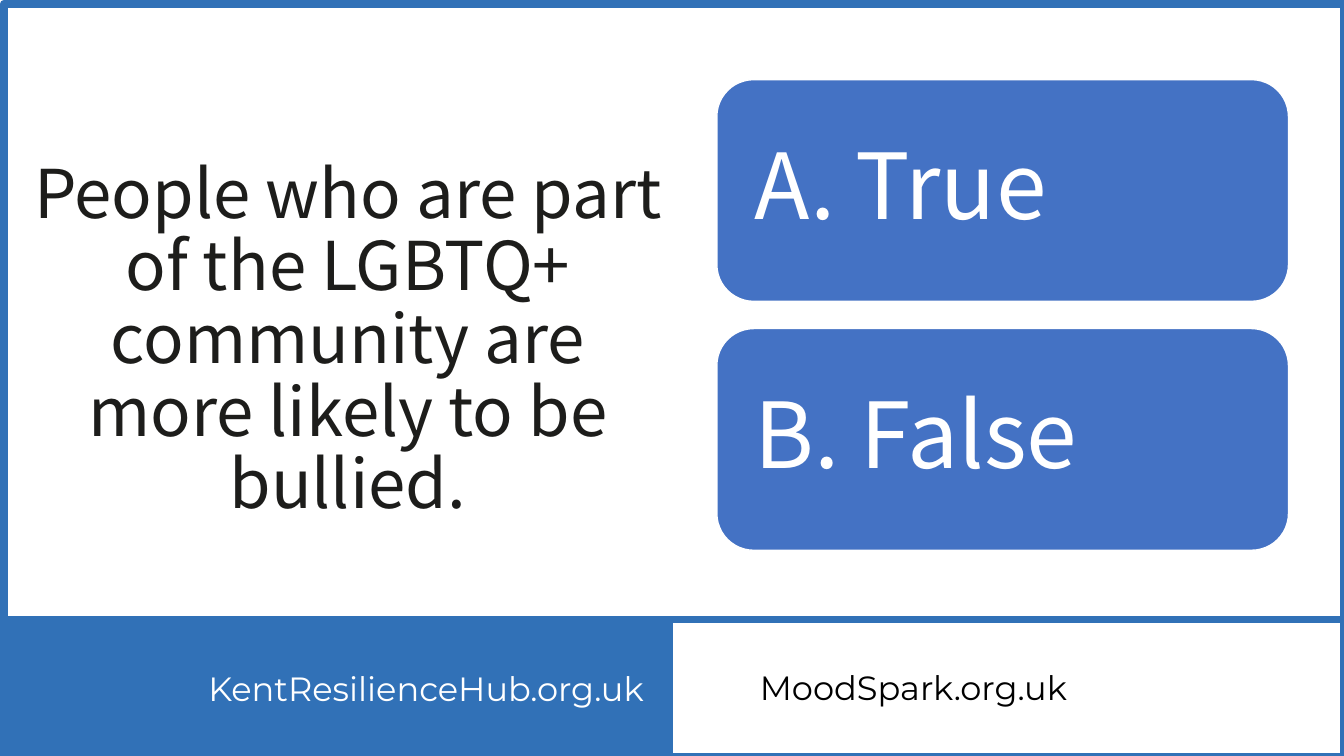
from pptx import Presentation, util as u
from pptx.dml.color import RGBColor
from pptx.enum import shapes, text

COLORS = {"blue": "3171B7", "card": "4472C4", "white": "FFFFFF",
          "ink": "1D1D1B", "black": "000000"}
WIDTH, HEIGHT = 13.33, 7.5
HALF = WIDTH / 2
FOOTER_TOP = HEIGHT * 0.82
FOOTER_HEIGHT = 1.36

presentation = Presentation()
presentation.slide_width = u.Inches(WIDTH)
presentation.slide_height = u.Inches(HEIGHT)
slide = presentation.slides.add_slide(presentation.slide_layouts[6])


def add_panel(kind, box, fill, line, points):
    shape = slide.shapes.add_shape(kind, *map(u.Inches, box))
    shape.shadow.inherit = False
    if fill:
        shape.fill.solid()
        shape.fill.fore_color.rgb = RGBColor.from_string(COLORS[fill])
    else:
        shape.fill.background()
    shape.line.color.rgb = RGBColor.from_string(COLORS[line])
    shape.line.width = u.Pt(points)
    return shape


def write(shape, words, font_name, size, color, align, spacing=1.0):
    shape.text_frame.word_wrap = True
    paragraph = shape.text_frame.paragraphs[0]
    paragraph.text = words
    paragraph.alignment = align
    paragraph.line_spacing = spacing
    for name, value in {"name": font_name, "size": u.Pt(size)}.items():
        setattr(paragraph.font, name, value)
    paragraph.font.color.rgb = RGBColor.from_string(COLORS[color])


# Footer band and slide frame
rectangle = shapes.MSO_SHAPE.RECTANGLE
for box, fill, points in [
    ((0, FOOTER_TOP, WIDTH, FOOTER_HEIGHT), None, 5),
    ((0, FOOTER_TOP, HALF, FOOTER_HEIGHT), "blue", 1),
    ((0.04, 0.04, WIDTH - 0.04, 7.47), None, 6),
]:
    add_panel(rectangle, box, fill, "blue", points)

# Web addresses and question
center = text.PP_ALIGN.CENTER
question = "People who are part of the LGBTQ+ community are more likely to be bullied."
for box, words, font_name, size, color, spacing in [
    ((1.85, 6.58, 4.75, 0.5), "KentResilienceHub.org.uk", "Montserrat", 24, "white", 1.0),
    ((6.81, 6.57, 4.5, 0.5), "MoodSpark.org.uk", "Montserrat", 24, "black", 1.0),
    ((0.23, 1.54, 6.44, 2.21), question, "Noto Sans CJK KR", 48, "ink", 0.9),
]:
    label = slide.shapes.add_textbox(*map(u.Inches, box))
    write(label, words, font_name, size, color, center, spacing)

# Answer cards
CARD_TOP, CARD_HEIGHT, CARD_GAP = 0.79, 2.2, 0.27
for row, answer in enumerate(["A. True", "B. False"]):
    top = CARD_TOP + row * (CARD_HEIGHT + CARD_GAP)
    card = add_panel(shapes.MSO_SHAPE.ROUNDED_RECTANGLE,
                     (7.11, top, 5.67, CARD_HEIGHT), "card", "white", 1)
    for side in ("left", "top", "right", "bottom"):
        setattr(card.text_frame, f"margin_{side}", u.Inches(0.27))
    card.text_frame.vertical_anchor = text.MSO_ANCHOR.MIDDLE
    write(card, answer, "Noto Sans CJK KR", 65, "white", text.PP_ALIGN.LEFT, 0.9)

presentation.save("out.pptx")
